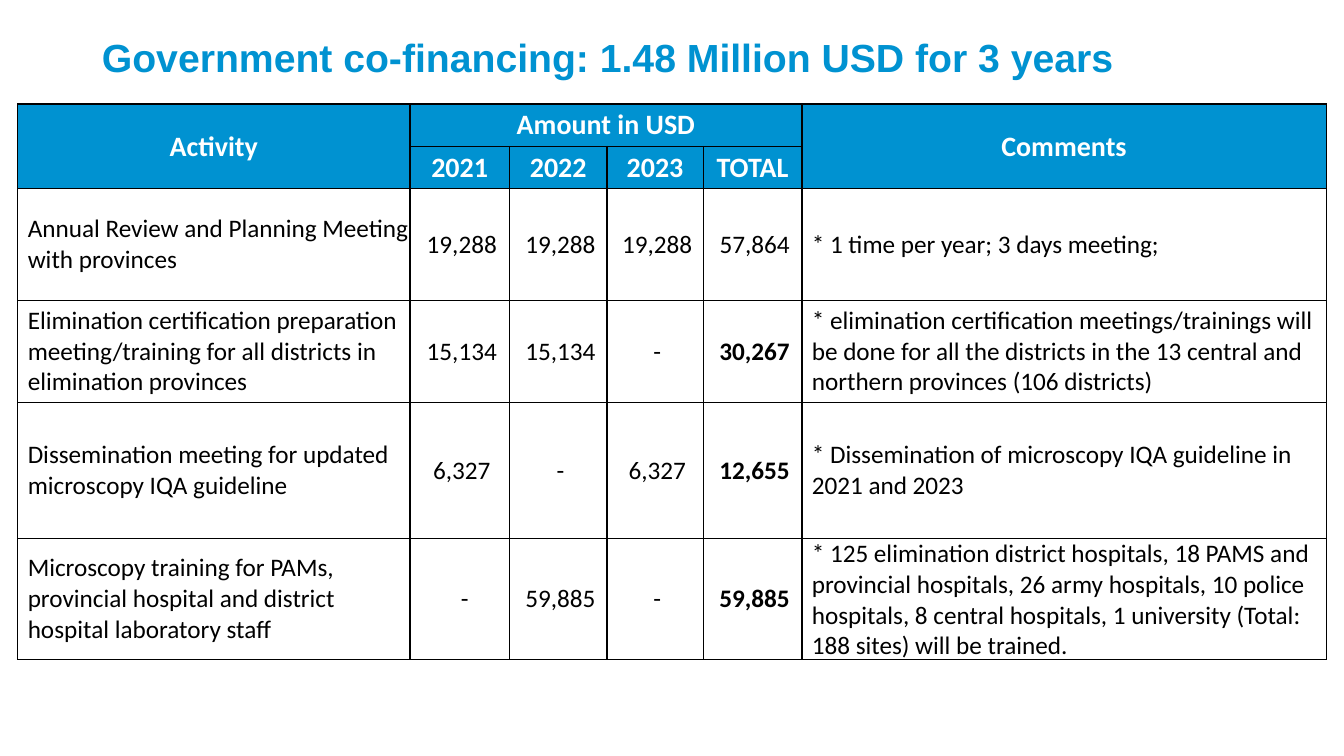
import pptx
import pptx.util
import pptx.dml.color
import pptx.enum.text
import pptx.oxml
import pptx.oxml.ns

Cm = pptx.util.Cm
Pt = pptx.util.Pt
ALIGN = pptx.enum.text.PP_ALIGN
MIDDLE = pptx.enum.text.MSO_ANCHOR.MIDDLE
BLUE, WHITE, BLACK = "0092D1", "FFFFFF", "000000"

HEADS = [
    ["Activity", "Amount in USD", "", "", "", "Comments"],
    ["", "2021", "2022", "2023", "TOTAL", ""],
]
ROWS = [
    ["Annual Review and Planning Meeting with provinces",
     "19,288 ", "19,288 ", "19,288 ", "57,864 ",
     "* 1 time per year; 3 days meeting;"],
    ["Elimination certification preparation meeting/training for all "
     "districts in elimination provinces",
     "15,134 ", "15,134 ", "- ", "30,267 ",
     "* elimination certification meetings/trainings will be done for all "
     "the districts in the 13 central and northern provinces (106 districts)"],
    ["Dissemination meeting for updated microscopy IQA guideline",
     "6,327 ", "- ", "6,327 ", "12,655 ",
     "* Dissemination of microscopy IQA guideline in 2021 and 2023"],
    ["Microscopy training for PAMs, provincial hospital and district "
     "hospital laboratory staff",
     "-", "59,885 ", "- ", "59,885 ",
     "* 125 elimination district hospitals, 18 PAMS and provincial "
     "hospitals, 26 army hospitals, 10 police hospitals, 8 central "
     "hospitals, 1 university (Total: 188 sites) will be trained."],
]
WIDTHS = [9.88, 2.51, 2.46, 2.42, 2.49, 13.21]
HEIGHTS = [1.07, 1.07, 2.81, 2.57, 3.43, 2.9]
SPANS = [(0, 0, 1, 0), (0, 1, 0, 4), (0, 5, 1, 5)]


def color(code):
    return pptx.dml.color.RGBColor.from_string(code)


class Page:
    def __init__(self, slide):
        self.slide = slide

    def label(self, frame, text, face, size, ink, bold, align):
        par = frame.paragraphs[0]
        par.text = text
        par.alignment = align
        par.font.name = face
        par.font.size = Pt(size)
        par.font.bold = bold
        par.font.color.rgb = color(ink)
        return par

    def title(self, text, left, top, width, height):
        box = self.slide.shapes.add_textbox(Cm(left), Cm(top), Cm(width), Cm(height))
        frame = box.text_frame
        frame.word_wrap = True
        frame.vertical_anchor = MIDDLE
        frame.margin_left = frame.margin_right = 0
        frame.margin_top = frame.margin_bottom = 0
        self.label(frame, text, "Arial", 28, BLUE, True, ALIGN.LEFT)

    def border(self, cell):
        props = cell._tc.get_or_add_tcPr()
        for spot, side in enumerate(["lnL", "lnR", "lnT", "lnB"]):
            line = pptx.oxml.parse_xml(
                f'<a:{side} {pptx.oxml.ns.nsdecls("a")} w="12700"><a:solidFill>'
                f'<a:srgbClr val="{BLACK}"/></a:solidFill></a:{side}>')
            props.insert(spot, line)

    def cell(self, cell, text, head, col, bold):
        cell.vertical_anchor = MIDDLE
        cell.margin_left = cell.margin_right = 0
        cell.margin_top = cell.margin_bottom = 0
        if head:
            cell.fill.solid()
            cell.fill.fore_color.rgb = color(BLUE)
        else:
            cell.fill.background()
        self.border(cell)
        center = head or 0 < col < len(WIDTHS) - 1
        par = self.label(cell.text_frame, text, "Calibri", 20 if head else 18,
                         WHITE if head else BLACK, bold,
                         ALIGN.CENTER if center else ALIGN.LEFT)
        if not head:
            par._p.get_or_add_pPr().set("marL", str(Cm(0.25)))

    def table(self, left, top):
        data = HEADS + ROWS
        table = self.slide.shapes.add_table(
            len(data), len(WIDTHS), Cm(left), Cm(top),
            Cm(sum(WIDTHS)), Cm(sum(HEIGHTS))).table
        table.first_row = table.horz_banding = False
        for col, width in zip(table.columns, WIDTHS):
            col.width = Cm(width)
        for row, height in zip(table.rows, HEIGHTS):
            row.height = Cm(height)
        for r, line in enumerate(data):
            head = r < len(HEADS)
            for c, text in enumerate(line):
                bold = head or (c == 4 and r > len(HEADS))
                self.cell(table.cell(r, c), text, head, c, bold)
        for r, c, end, last in SPANS:
            table.cell(r, c).merge(table.cell(end, last))


def main():
    deck = pptx.Presentation()
    deck.slide_width = Cm(33.87)
    deck.slide_height = Cm(19.05)
    page = Page(deck.slides.add_slide(deck.slide_layouts[6]))
    page.title("Government co-financing: 1.48 Million USD for 3 years",
               2.57, 0.33, 28.52, 2.21)
    page.table(0.45, 2.62)
    deck.save("out.pptx")


if __name__ == "__main__":
    main()
